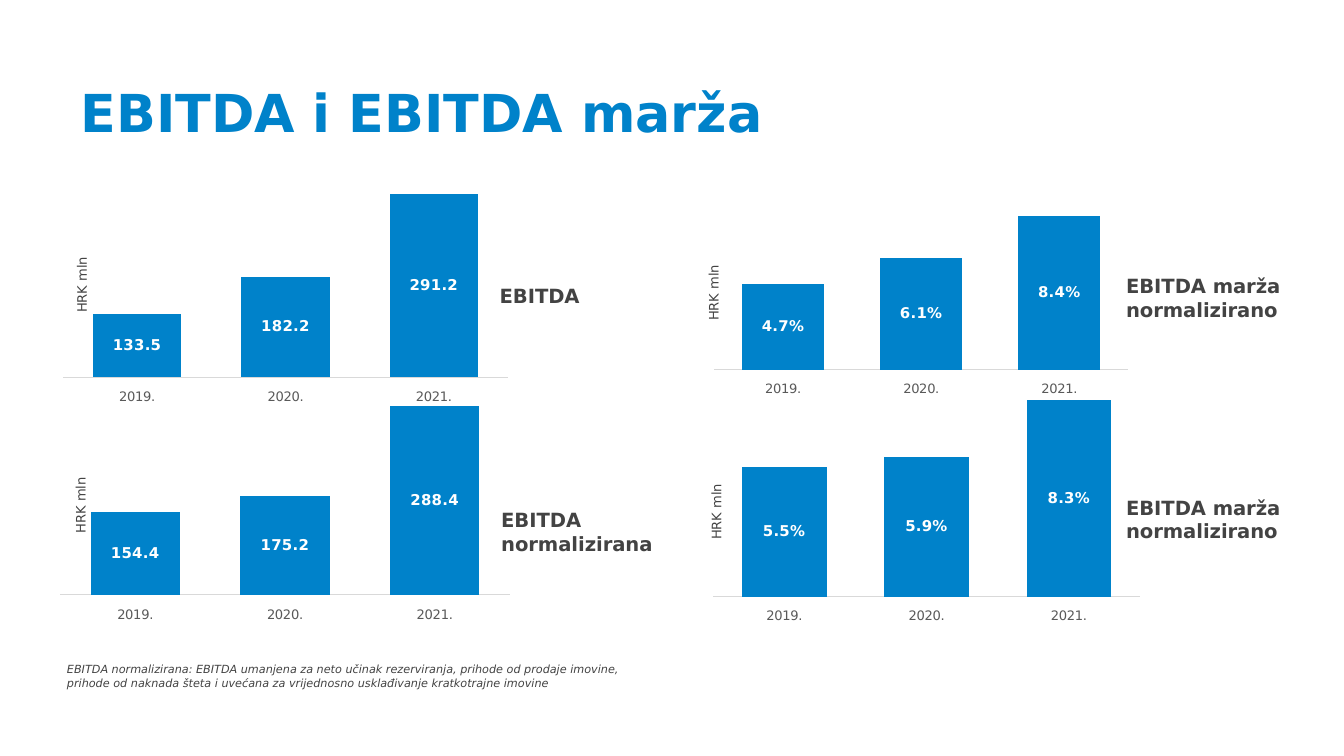
from dataclasses import dataclass

from pptx import Presentation
from pptx.chart.data import CategoryChartData
from pptx.dml.color import RGBColor
from pptx.enum.chart import XL_CHART_TYPE as ChartType
from pptx.enum.chart import XL_LABEL_POSITION as LabelPosition
from pptx.enum.chart import XL_TICK_LABEL_POSITION as TickLabels
from pptx.enum.chart import XL_TICK_MARK as TickMark
from pptx.enum.text import MSO_ANCHOR as Anchor
from pptx.enum.text import MSO_AUTO_SIZE as AutoSize
from pptx.enum.text import PP_ALIGN as Align
from pptx.oxml import parse_xml
from pptx.oxml.ns import nsdecls
from pptx.util import Pt

FONT = "DejaVu Sans"
BLUE = RGBColor(0x00, 0x82, 0xCA)
DARK = RGBColor(0x43, 0x43, 0x43)
GRAY = RGBColor(0x59, 0x59, 0x59)
AXIS_LINE = RGBColor(0xD9, 0xD9, 0xD9)
WHITE = RGBColor(0xFF, 0xFF, 0xFF)
BLACK = RGBColor(0x00, 0x00, 0x00)

YEARS = ("2019.", "2020.", "2021.")
UNIT = "HRK mln"
NOTE = ("EBITDA normalizirana: EBITDA umanjena za neto učinak rezerviranja, "
        "prihode od prodaje imovine, prihode od naknada šteta i uvećana za "
        "vrijednosno usklađivanje kratkotrajne imovine")


@dataclass
class Scale:
    number_format: str
    minimum: float
    maximum: float
    step: float


@dataclass
class Panel:
    """Label and unit places are offsets from the chart's corner."""
    box: tuple
    values: tuple
    scale: Scale
    label: tuple
    label_box: tuple
    unit_offset: tuple
    plot: tuple = ()


MILLIONS = Scale("#,##0.0", 50, 350, 50)
PERCENT = Scale("0.0%", 0, 0.09, 0.01)
MARGIN_LABEL = ("EBITDA marža", "normalizirano")

PANELS = (
    Panel((377.3, 203, 238.3, 133.9), (0.055, 0.059, 0.083), PERCENT,
          MARGIN_LABEL, (218.9, 59.1, 103, 33.8), (-25.2, 63.4)),
    Panel((28.8, 77, 248.4, 142.6), (133.5, 182.2, 291.2), MILLIONS,
          ("EBITDA",), (231.8, 71.3, 70.6, 20.9), (-16.6, 67.7)),
    Panel((380.2, 86.4, 236.2, 126), (0.047, 0.061, 0.084), PERCENT,
          MARGIN_LABEL, (216, 56.9, 103, 33.8), (-29.6, 62.6),
          plot=(0.01, 0.19, 0.94, 0.71)),
    Panel((27.4, 188.6, 250.6, 147.6), (154.4, 175.2, 288.4), MILLIONS,
          ("EBITDA", "normalizirana"), (234, 80, 107.3, 32.4), (-15.9, 74.2)),
)


def set_font(font, size, color, bold=False, italic=False):
    font.name = FONT
    font.size = Pt(size)
    font.bold = bold
    font.italic = italic
    font.color.rgb = color


def add_text(slide, box, lines, size, align=Align.LEFT, **style):
    shape = slide.shapes.add_textbox(*map(Pt, box))
    frame = shape.text_frame
    frame.word_wrap = True
    frame.auto_size = AutoSize.SHAPE_TO_FIT_TEXT
    frame.text = "\n".join(lines)
    for paragraph in frame.paragraphs:
        paragraph.alignment = align
        set_font(paragraph.runs[0].font, size, DARK, **style)
    return shape


def add_title(slide, box):
    title = slide.shapes.title
    title.left, title.top, title.width, title.height = map(Pt, box)
    frame = title.text_frame
    frame.text = "EBITDA i EBITDA marža"
    frame.auto_size = AutoSize.NONE
    frame.vertical_anchor = Anchor.TOP
    frame.margin_left = frame.margin_right = Pt(7.2)
    frame.margin_top = frame.margin_bottom = Pt(7.2)
    paragraph = frame.paragraphs[0]
    paragraph.alignment = Align.LEFT
    set_font(paragraph.runs[0].font, 28, BLUE, bold=True)


def set_plot_box(chart, plot):
    fields = "".join(f'<c:{name} val="{value}"/>'
                     for name, value in zip("xywh", plot))
    layout = parse_xml(
        f'<c:layout {nsdecls("c")}><c:manualLayout>'
        '<c:layoutTarget val="inner"/><c:xMode val="edge"/>'
        f'<c:yMode val="edge"/>{fields}</c:manualLayout></c:layout>')
    plot_area = chart.element.chart.plotArea
    for old in plot_area.findall(layout.tag):
        plot_area.remove(old)
    plot_area.insert(0, layout)


def add_column_chart(slide, panel):
    scale = panel.scale
    data = CategoryChartData(number_format=scale.number_format)
    data.categories = YEARS
    data.add_series("Series 1", panel.values)
    chart = slide.shapes.add_chart(
        ChartType.COLUMN_CLUSTERED, *map(Pt, panel.box), data).chart
    chart.has_title = False
    chart.has_legend = False
    set_font(chart.font, 10, BLACK)

    # Clear background, since neighbouring charts overlap
    chart.element.chart.addnext(parse_xml(
        f'<c:spPr {nsdecls("c", "a")}><a:noFill/>'
        '<a:ln><a:noFill/></a:ln></c:spPr>'))
    if panel.plot:
        set_plot_box(chart, panel.plot)

    # Axes
    years = chart.category_axis
    years.major_tick_mark = years.minor_tick_mark = TickMark.NONE
    years.tick_label_position = TickLabels.LOW
    years.format.line.color.rgb = AXIS_LINE
    years.format.line.width = Pt(0.75)
    set_font(years.tick_labels.font, 7, GRAY)
    values = chart.value_axis
    values.minimum_scale = scale.minimum
    values.maximum_scale = scale.maximum
    values.major_unit = scale.step
    values.has_major_gridlines = False
    values.visible = False

    # Columns and their values
    columns = chart.plots[0]
    columns.gap_width = 68
    columns.overlap = -52
    columns.vary_by_categories = False
    series = columns.series[0]
    series.format.fill.solid()
    series.format.fill.fore_color.rgb = BLUE
    labels = series.data_labels
    labels.show_value = True
    labels.position = LabelPosition.CENTER
    labels.number_format = scale.number_format
    labels.number_format_is_linked = False
    set_font(labels.font, 8, WHITE, bold=True)


def add_panel(slide, panel):
    left, top = panel.box[:2]
    add_column_chart(slide, panel)

    # Vertical unit beside the columns
    dx, dy = panel.unit_offset
    unit = add_text(slide, (left + dx, top + dy, 63.4, 15.8), (UNIT,), 7,
                    align=Align.CENTER)
    unit.rotation = 270

    # Name of the measure
    dx, dy, width, height = panel.label_box
    add_text(slide, (left + dx, top + dy, width, height), panel.label, 10.5,
             bold=True)


def main():
    presentation = Presentation()
    presentation.slide_width = Pt(720)
    presentation.slide_height = Pt(405)
    slide = presentation.slides.add_slide(presentation.slide_layouts[5])
    add_title(slide, (36, 36, 412.6, 87.1))
    for panel in PANELS:
        add_panel(slide, panel)
    add_text(slide, (28.8, 351.4, 324.7, 21.6), (NOTE,), 6, italic=True)
    presentation.save("out.pptx")


if __name__ == "__main__":
    main()
